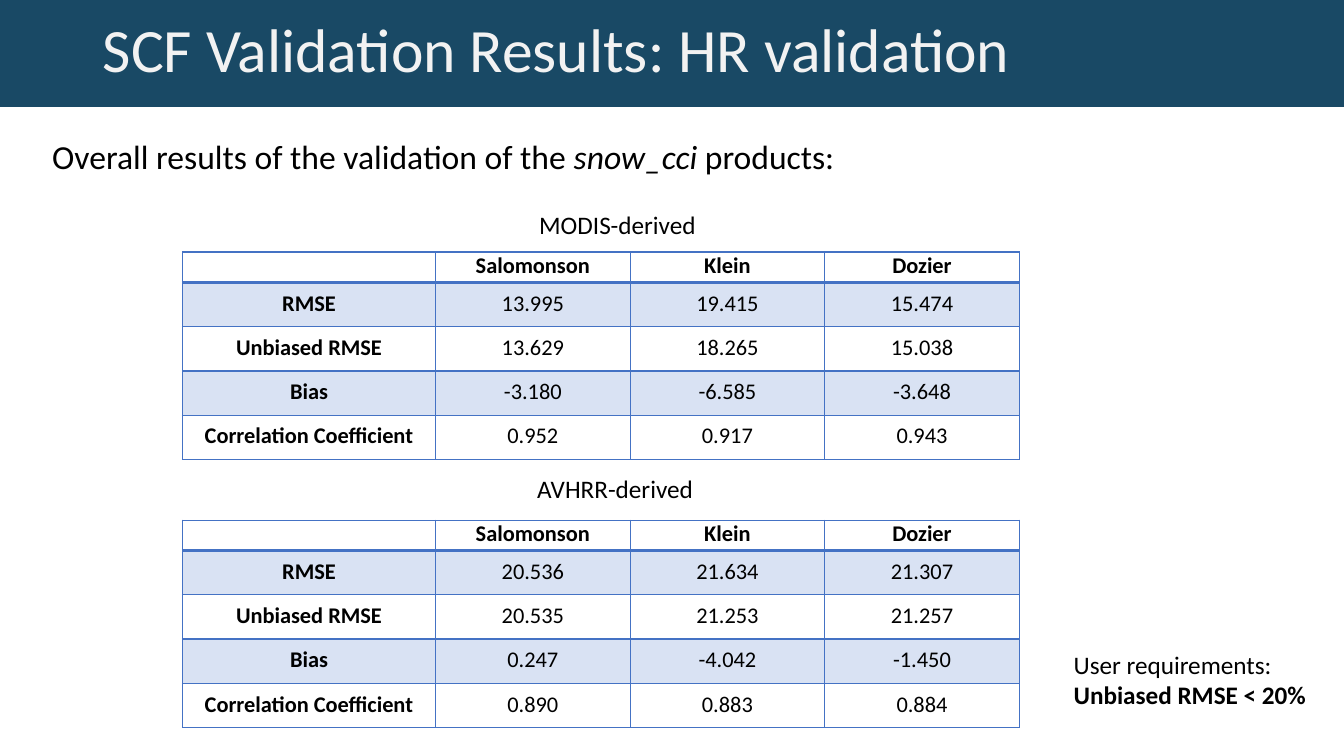
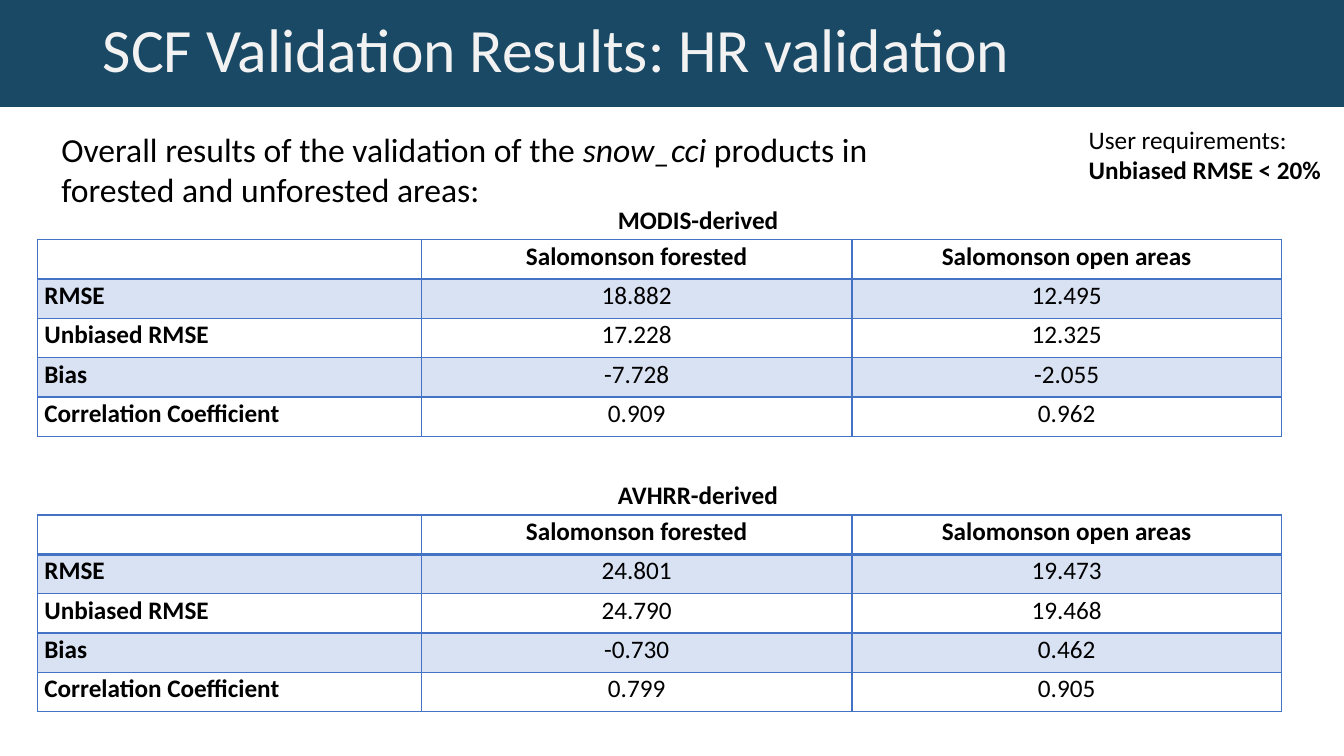
from lxml import etree
from pptx import Presentation
from pptx.dml.color import RGBColor
from pptx.enum import shapes, text
from pptx.oxml.ns import qn
from pptx.util import Inches, Pt

FONT = "Calibri"
BAND, TITLE_COLOR, TEXT_COLOR, ACCENT = "194965", "F2F2F2", "000000", "4472C4"
TITLE = "SCF Validation Results: HR validation"
MEASURES = ["RMSE", "Unbiased RMSE", "Bias", "Correlation Coefficient"]
REQUIREMENT = [[("User requirements:", "")], [("Unbiased RMSE < 20%", "b")]]


def color(value):
    return RGBColor.from_string(value)


def format_run(run, size, value=TEXT_COLOR, style=""):
    """Style is any mix of the letters b (bold) and i (italic)."""
    run.font.name = FONT
    run.font.size = Pt(size)
    run.font.color.rgb = color(value)
    run.font.bold = "b" in style
    run.font.italic = "i" in style


def prepare_layout(presentation):
    """Put the title band on the layout and place its title over the band."""
    layout = presentation.slide_layouts[5]
    title = layout.placeholders[0]
    title.left, title.top = Inches(0.92), Inches(-0.01)
    title.width, title.height = Inches(9.27), Inches(1.07)

    # Layouts cannot add shapes, so the band is drawn on a slide and moved.
    first_slide = presentation.slides.add_slide(layout)
    band = first_slide.shapes.add_shape(
        shapes.MSO_SHAPE.RECTANGLE, 0, title.top, presentation.slide_width, title.height)
    band.shadow.inherit = False
    band.fill.solid()
    band.fill.fore_color.rgb = color(BAND)
    band.line.fill.background()
    layout.shapes._spTree.insert(2, band._element)
    return first_slide, presentation.slides.add_slide(layout)


def add_title(slide):
    frame = slide.shapes.title.text_frame
    frame.text = TITLE
    frame.auto_size = text.MSO_AUTO_SIZE.NONE
    frame.vertical_anchor = text.MSO_ANCHOR.MIDDLE
    paragraph = frame.paragraphs[0]
    paragraph.alignment = text.PP_ALIGN.LEFT
    paragraph.line_spacing = 0.9
    format_run(paragraph.runs[0], 44, TITLE_COLOR)


def add_text(slide, box, paragraphs, size=18, wrap=False):
    """Add a text box; each paragraph is a list of (text, style) pairs."""
    frame = slide.shapes.add_textbox(*map(Inches, box)).text_frame
    frame.word_wrap = wrap
    frame.auto_size = text.MSO_AUTO_SIZE.SHAPE_TO_FIT_TEXT
    for index, parts in enumerate(paragraphs):
        paragraph = frame.add_paragraph() if index else frame.paragraphs[0]
        for words, style in parts:
            run = paragraph.add_run()
            run.text = words
            format_run(run, size, style=style)


def add_intro(slide, box, ending):
    parts = [("Overall results of the validation of the ", ""), ("snow_cci", "i"), (ending, "")]
    add_text(slide, box, [parts], size=24, wrap=True)


def add_border(cell, side, width):
    line = etree.SubElement(cell._tc.get_or_add_tcPr(), qn(f"a:ln{side}"), w=str(Pt(width)))
    fill = etree.SubElement(line, qn("a:solidFill"))
    etree.SubElement(fill, qn("a:srgbClr"), val=ACCENT)


def fill_cell(cell, shaded):
    if not shaded:
        cell.fill.background()
        return
    cell.fill.solid()
    cell.fill.fore_color.rgb = color(ACCENT)
    tint = cell._tc.tcPr.find(qn("a:solidFill")).find(qn("a:srgbClr"))
    etree.SubElement(tint, qn("a:alpha"), val="20000")


def format_cell(cell, row, words, size, alignment, bold):
    heavy_side = {0: "B", 1: "T"}.get(row)
    for side in "LRTB":
        add_border(cell, side, 2 if side == heavy_side else 1)
    fill_cell(cell, row % 2 == 1)
    cell.margin_left = cell.margin_right = Inches(0.07)
    cell.margin_top = cell.margin_bottom = 0
    cell.vertical_anchor = text.MSO_ANCHOR.MIDDLE
    cell.text = words
    paragraph = cell.text_frame.paragraphs[0]
    paragraph.alignment = alignment
    paragraph.line_spacing = Pt(18)
    paragraph.space_after = Pt(6)
    for run in paragraph.runs:
        format_run(run, size, style="b" if bold else "")


def add_results(slide, position, widths, heights, headings, values, size, label_alignment):
    """Add a table of one column per heading and one row per measure."""
    rows = [["", *headings]] + [[name, *line.split()] for name, line in zip(MEASURES, values)]
    row_heights = [heights[0]] + [heights[1]] * len(MEASURES)
    box = (*position, sum(widths), sum(row_heights))
    table = slide.shapes.add_table(len(rows), len(widths), *map(Inches, box)).table
    table.first_row = table.horz_banding = False
    for column, width in zip(table.columns, widths):
        column.width = Inches(width)
    for row, (cells, height) in enumerate(zip(rows, row_heights)):
        table.rows[row].height = Inches(height)
        for column, words in enumerate(cells):
            is_label = row > 0 and column == 0
            alignment = label_alignment if is_label else text.PP_ALIGN.CENTER
            format_cell(table.cell(row, column), row, words, size, alignment,
                        bold=row == 0 or column == 0)


def build_overall(slide):
    add_title(slide)
    add_intro(slide, (0.42, 1.3, 12.34, 0.5), " products:")
    sensors = [
        ("MODIS-derived", (5.25, 2.03, 1.77, 0.4), 2.5,
         ["13.995 19.415 15.474", "13.629 18.265 15.038",
          "-3.180 -6.585 -3.648", "0.952 0.917 0.943"]),
        ("AVHRR-derived", (5.23, 4.65, 1.82, 0.4), 5.16,
         ["20.536 21.634 21.307", "20.535 21.253 21.257",
          "0.247 -4.042 -1.450", "0.890 0.883 0.884"]),
    ]
    for caption, caption_box, top, values in sensors:
        add_text(slide, caption_box, [[(caption, "")]])
        add_results(slide, (1.81, top), [2.51] + [1.93] * 3, (0.29, 0.44),
                    ["Salomonson", "Klein", "Dozier"], values, 16, text.PP_ALIGN.CENTER)
    add_text(slide, (10.55, 6.39, 2.53, 0.71), REQUIREMENT)


def build_by_land_cover(slide):
    add_title(slide)
    add_intro(slide, (0.51, 1.23, 8.48, 0.91), " products in forested and unforested areas:")
    add_text(slide, (10.7, 1.18, 2.53, 0.71), REQUIREMENT)
    sensors = [
        ("MODIS-derived", 1.98,
         ["18.882 12.495", "17.228 12.325", "-7.728 -2.055", "0.909 0.962"]),
        ("AVHRR-derived", 4.71,
         ["24.801 19.473", "24.790 19.468", "-0.730 0.462", "0.799 0.905"]),
    ]
    for caption, top, values in sensors:
        add_text(slide, (6.03, top, 1.82, 0.4), [[(caption, "b")]])
        add_results(slide, (0.37, top + 0.4), [3.81, 4.27, 4.26], (0.39, 0.39),
                    ["Salomonson forested", "Salomonson open areas"],
                    values, 18, text.PP_ALIGN.JUSTIFY)


def main():
    presentation = Presentation()
    presentation.slide_width, presentation.slide_height = Inches(13.33), Inches(7.5)
    overall, by_land_cover = prepare_layout(presentation)
    build_overall(overall)
    build_by_land_cover(by_land_cover)
    presentation.save("out.pptx")


if __name__ == "__main__":
    main()
